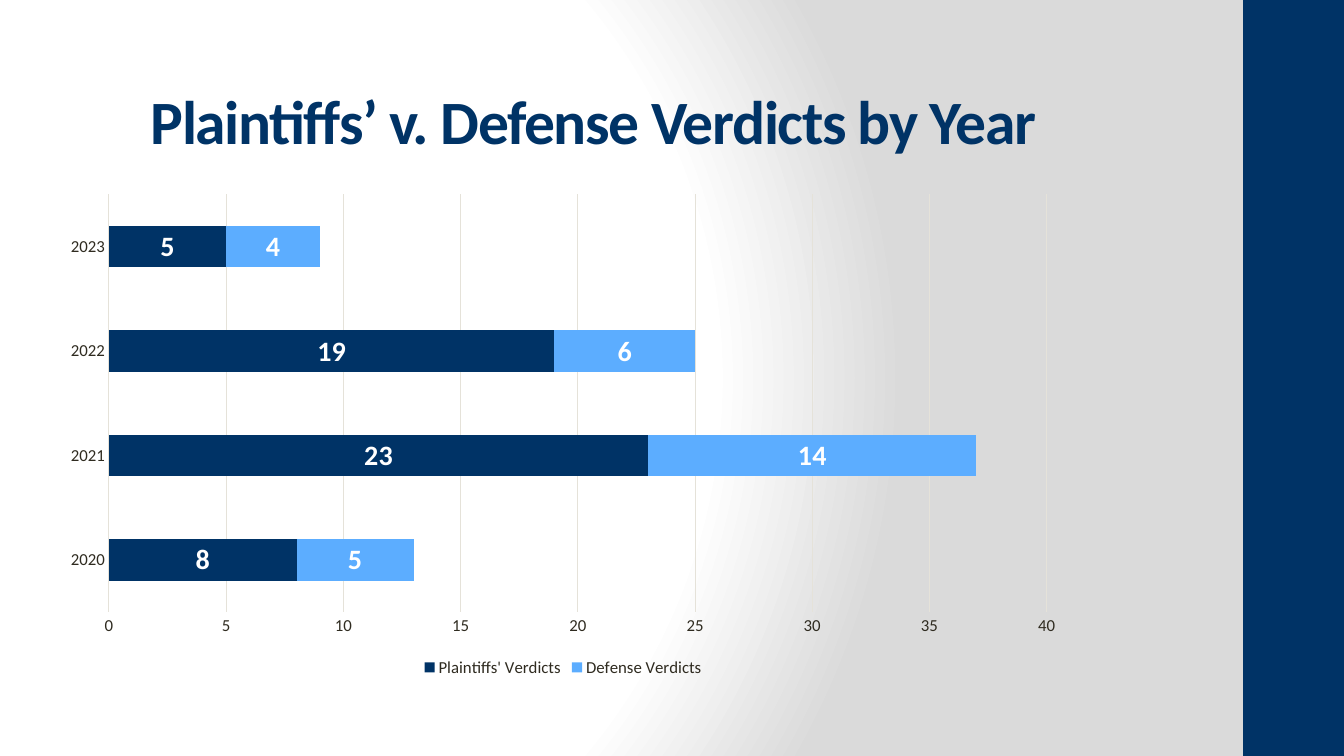
from pptx import Presentation
from pptx.chart.data import CategoryChartData
from pptx.dml.color import RGBColor
from pptx.enum.chart import XL_CHART_TYPE as ChartType, XL_LABEL_POSITION as LabelPosition
from pptx.enum.chart import XL_LEGEND_POSITION as LegendPosition, XL_TICK_MARK as TickMark
from pptx.enum.shapes import MSO_SHAPE as Shape
from pptx.enum.text import MSO_ANCHOR as Anchor, PP_ALIGN as Align
from pptx.oxml import parse_xml
from pptx.oxml.ns import nsdecls
from pptx.util import Inches, Pt

NAVY = RGBColor(0x00, 0x33, 0x66)
SKY = RGBColor(0x5C, 0xAD, 0xFF)
INK = RGBColor(0x2F, 0x2B, 0x20)
GRID = RGBColor(0xE5, 0xE2, 0xD9)
WHITE = RGBColor(0xFF, 0xFF, 0xFF)
SILVER = RGBColor(0xDA, 0xDA, 0xDA)
FONT = "Calibri"
WIDTH, HEIGHT = 13.33, 7.5
BAND_WIDTH = 1

YEARS = ["2020", "2021", "2022", "2023"]
VERDICTS = [
    ("Plaintiffs' Verdicts", [8, 23, 19, 5], NAVY),
    ("Defense Verdicts", [5, 14, 6, 4], SKY),
]


def style(font, size, color, bold=False):
    font.name = FONT
    font.size = Pt(size)
    font.color.rgb = color
    font.bold = bold


def paint_background(slide):
    stops = "".join(
        f'<a:gs pos="{share * 1000}"><a:srgbClr val="{color}"/></a:gs>'
        for share, color in [(0, WHITE), (75, WHITE), (100, SILVER)]
    )
    slide.element.cSld.insert(0, parse_xml(
        f'<p:bg {nsdecls("p", "a")}><p:bgPr><a:gradFill rotWithShape="1">'
        f'<a:gsLst>{stops}</a:gsLst><a:path path="circle">'
        '<a:fillToRect l="20000" t="50000" r="100000" b="50000"/></a:path>'
        '</a:gradFill><a:effectLst/></p:bgPr></p:bg>'
    ))


def add_side_band(slide, box):
    band = slide.shapes.add_shape(Shape.RECTANGLE, *map(Inches, box))
    band.shadow.inherit = False
    band.fill.solid()
    band.fill.fore_color.rgb = NAVY
    band.line.fill.background()


def add_title(slide, box, text):
    frame = slide.shapes.add_textbox(*map(Inches, box)).text_frame
    frame.word_wrap = True
    frame.vertical_anchor = Anchor.MIDDLE
    heading = frame.paragraphs[0]
    heading.alignment = Align.CENTER
    words = heading.add_run()
    words.text = text
    style(words.font, 44, NAVY, bold=True)
    words.font._element.set("spc", "-100")


def add_verdict_chart(slide, box):
    data = CategoryChartData()
    data.categories = YEARS
    for name, counts, _ in VERDICTS:
        data.add_series(name, counts)
    chart = slide.shapes.add_chart(ChartType.BAR_STACKED, *map(Inches, box), data).chart
    style(chart.font, 10, INK)
    chart.has_title = False

    for axis in (chart.category_axis, chart.value_axis):
        axis.major_tick_mark = axis.minor_tick_mark = TickMark.NONE
        axis.format.line.fill.background()
        style(axis.tick_labels.font, 12, INK)
    counts_axis = chart.value_axis
    counts_axis.minimum_scale, counts_axis.maximum_scale = 0, 40
    counts_axis.major_unit = 5
    gridline = counts_axis.major_gridlines.format.line
    gridline.color.rgb = GRID
    gridline.width = Pt(0.75)

    chart.has_legend = True
    chart.legend.position = LegendPosition.BOTTOM
    chart.legend.include_in_layout = False
    style(chart.legend.font, 12, INK)

    bars = chart.plots[0]
    bars.gap_width, bars.overlap = 150, 100
    bars.vary_by_categories = False
    for series, (_, _, color) in zip(bars.series, VERDICTS):
        series.format.fill.solid()
        series.format.fill.fore_color.rgb = color
        labels = series.data_labels
        labels.show_value = True
        labels.position = LabelPosition.CENTER
        style(labels.font, 20, WHITE, bold=True)


def main():
    deck = Presentation()
    deck.slide_width, deck.slide_height = Inches(WIDTH), Inches(HEIGHT)
    slide = deck.slides.add_slide(deck.slide_layouts[6])
    paint_background(slide)
    add_side_band(slide, (WIDTH - BAND_WIDTH, 0, BAND_WIDTH, HEIGHT))
    add_title(slide, (0.33, 0.87, 11.11, 0.63), "Plaintiffs’ v. Defense Verdicts by Year")
    add_verdict_chart(slide, (0.5, 1.83, 10.17, 4.93))
    deck.save("out.pptx")


if __name__ == "__main__":
    main()
